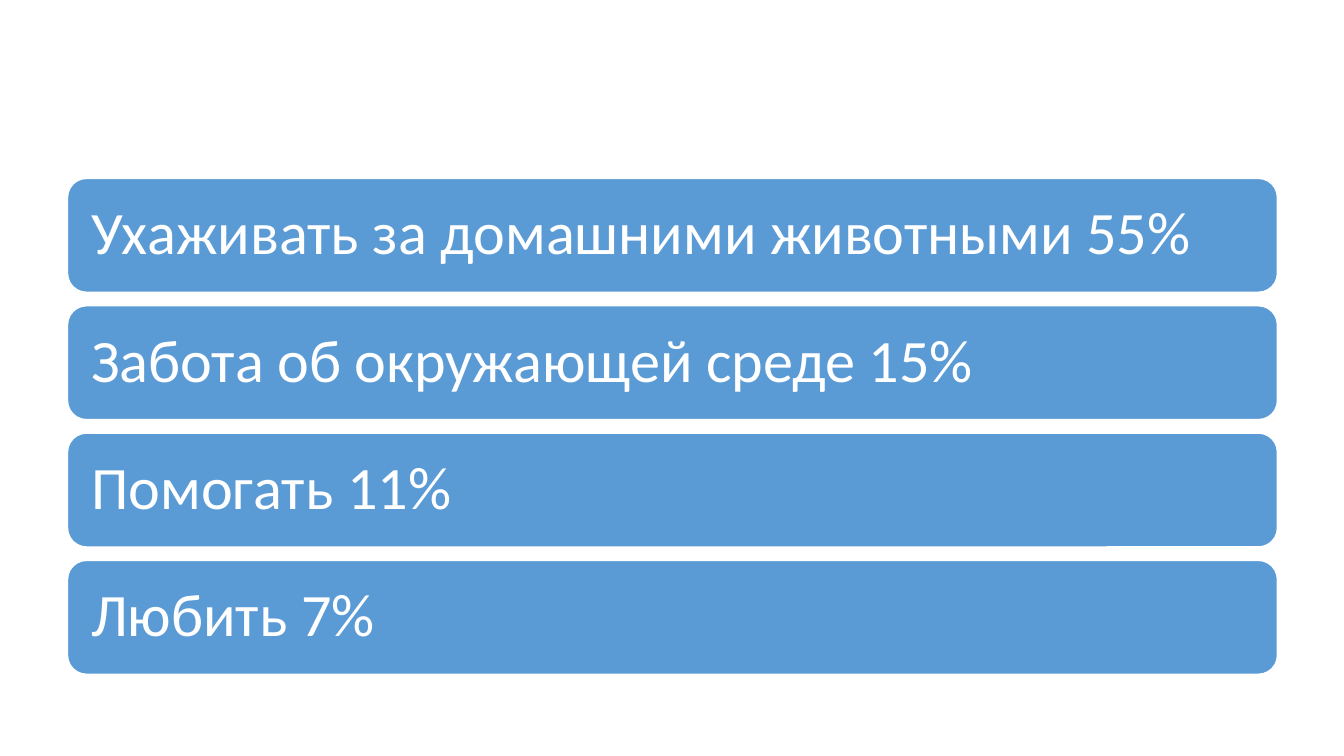
import pptx
import pptx.util
import pptx.dml.color
import pptx.enum.shapes
import pptx.enum.text
from pptx.util import Inches

BAR_BLUE = pptx.dml.color.RGBColor(0x5B, 0x9B, 0xD5)
WHITE = pptx.dml.color.RGBColor(0xFF, 0xFF, 0xFF)

ANSWERS = [
    "Ухаживать за домашними животными 55%",
    "Забота об окружающей среде 15%",
    "Помогать 11%",
    "Любить 7%",
]
BAR_HEIGHT = 1.13


def add_answer_bar(slide, text, left, top, width, height):
    """Draw one rounded bar with its answer."""
    shape = slide.shapes.add_shape(
        pptx.enum.shapes.MSO_SHAPE.ROUNDED_RECTANGLE,
        Inches(left), Inches(top), Inches(width), Inches(height))
    shape.shadow.inherit = False
    shape.fill.solid()
    shape.fill.fore_color.rgb = BAR_BLUE
    shape.line.color.rgb = WHITE
    shape.line.width = pptx.util.Pt(1)

    # Answer text
    frame = shape.text_frame
    frame.word_wrap = True
    frame.vertical_anchor = pptx.enum.text.MSO_ANCHOR.MIDDLE
    frame.margin_left = frame.margin_right = Inches(0.18)
    frame.margin_top = frame.margin_bottom = Inches(0.18)
    paragraph = frame.paragraphs[0]
    paragraph.text = text
    paragraph.alignment = pptx.enum.text.PP_ALIGN.LEFT
    paragraph.line_spacing = 0.9
    paragraph.font.name = "Calibri"
    paragraph.font.size = pptx.util.Pt(43)
    paragraph.font.color.rgb = WHITE


def add_answer_list(slide, left, top, width, height):
    """Spread the bars evenly from the top to the bottom of the box."""
    pitch = (height - BAR_HEIGHT) / (len(ANSWERS) - 1)
    for index, answer in enumerate(ANSWERS):
        add_answer_bar(slide, answer, left, top + index * pitch, width, BAR_HEIGHT)


def main():
    presentation = pptx.Presentation()
    presentation.slide_width = Inches(13.33)
    presentation.slide_height = Inches(7.5)
    slide = presentation.slides.add_slide(presentation.slide_layouts[6])
    add_answer_list(slide, left=0.67, top=1.77, width=12, height=4.92)
    presentation.save("out.pptx")


if __name__ == "__main__":
    main()
